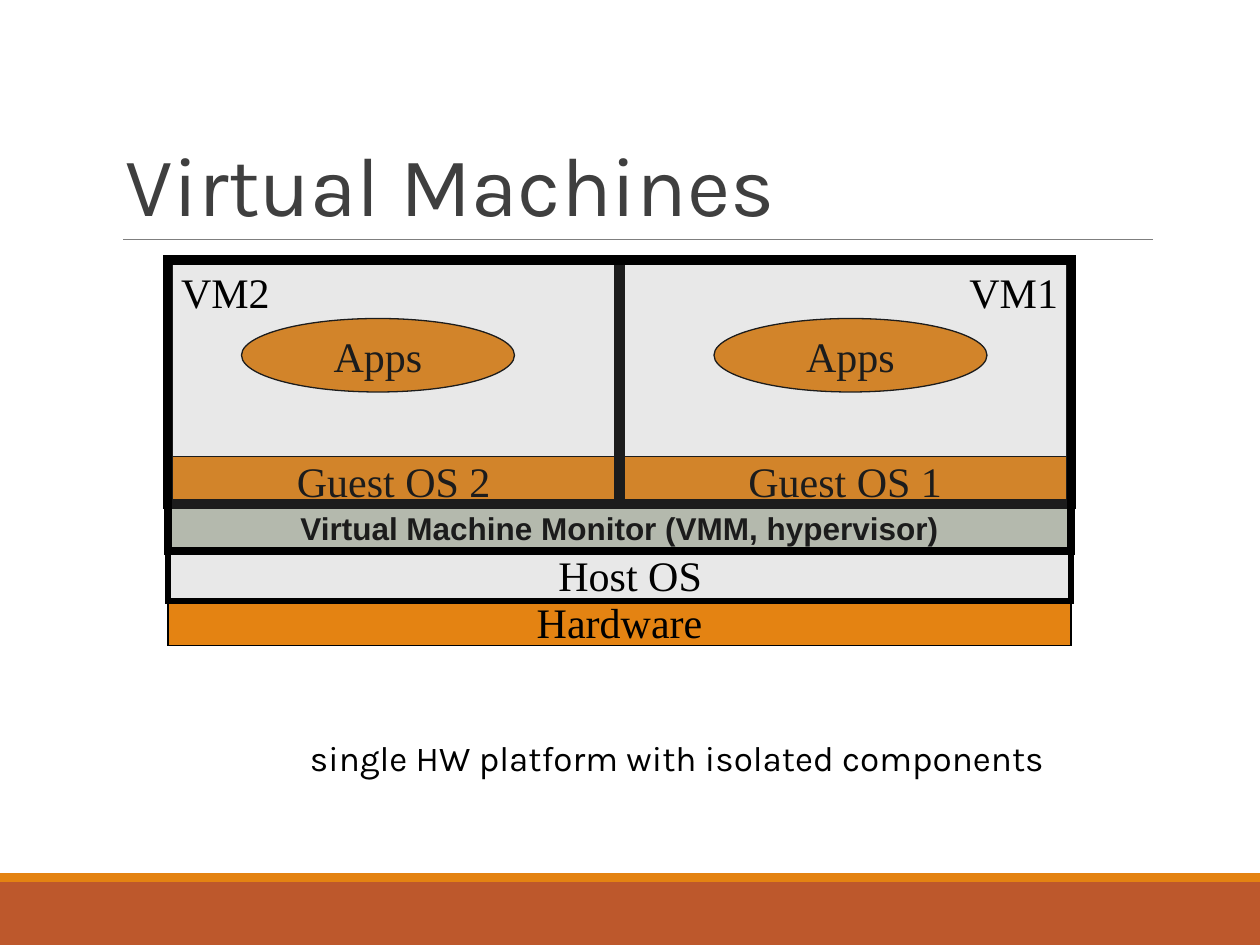
from dataclasses import dataclass

from lxml.etree import SubElement
from pptx import Presentation
from pptx.dml.color import RGBColor
from pptx.enum.shapes import MSO_CONNECTOR as Connector, MSO_SHAPE as Shape
from pptx.enum.text import MSO_ANCHOR as Anchor, PP_ALIGN as Align
from pptx.oxml.ns import qn
from pptx.util import Pt


@dataclass(frozen=True)
class Theme:
    ink: str = "000000"
    heading: str = "3F3F3F"
    rule: str = "7F7F7F"
    orange: str = "E48312"
    rust: str = "BD582C"
    sage: str = "BEC5B6"
    veil: str = "8C8C8C"
    title_size: int = 48
    label_size: int = 24
    caption_size: int = 20
    monitor_size: int = 18
    sans: str = "Karla"
    serif: str = "Times New Roman"
    bold_face: str = "Arial"


class SlideBuilder:
    def __init__(self, slide, theme):
        self.slide = slide
        self.theme = theme

    def style_text(self, frame, text, size=None, font=None, color=None,
                   align=Align.CENTER, bold=False):
        frame.text = text
        para = frame.paragraphs[0]
        para.alignment = align
        span = para.runs[0]
        span.font.size = Pt(size or self.theme.label_size)
        span.font.name = font or self.theme.serif
        span.font.bold = bold
        span.font.color.rgb = RGBColor.from_string(color or self.theme.ink)
        return para

    def box(self, left, top, width, height, fill=None, line=0.75,
            text=None, kind=Shape.RECTANGLE, opacity=None, **style):
        box = self.slide.shapes.add_shape(
            kind, Pt(left), Pt(top), Pt(width), Pt(height))
        box.shadow.inherit = False
        if fill:
            box.fill.solid()
            box.fill.fore_color.rgb = RGBColor.from_string(fill)
        else:
            box.fill.background()
        if opacity:
            color = box._element.spPr.find(qn("a:solidFill"))[0]
            SubElement(color, qn("a:alpha"), val=str(opacity * 1000))
        if line:
            box.line.width = Pt(line)
            box.line.color.rgb = RGBColor.from_string(self.theme.ink)
            outline = box._element.spPr.find(qn("a:ln"))
            SubElement(outline, qn("a:miter"), lim="800000")
        else:
            box.line.fill.background()
        if text:
            box.text_frame.vertical_anchor = Anchor.MIDDLE
            self.style_text(box.text_frame, text, **style)

    def label(self, left, top, width, height, text, anchor=Anchor.TOP,
              wrap=False, **style):
        box = self.slide.shapes.add_textbox(
            Pt(left), Pt(top), Pt(width), Pt(height))
        box.text_frame.word_wrap = wrap
        box.text_frame.vertical_anchor = anchor
        return self.style_text(box.text_frame, text, **style)

    def rule(self, left, top, right):
        line = self.slide.shapes.add_connector(
            Connector.STRAIGHT, Pt(left), Pt(top), Pt(right), Pt(top))
        line.line.width = Pt(0.75)
        line.line.color.rgb = RGBColor.from_string(self.theme.rule)
        SubElement(line._element.spPr, qn("a:effectLst"))

    def machine(self, left, top, width, height, apps_left, guest):
        guest_height = 27
        self.box(left, top + height - guest_height, width, guest_height,
                 self.theme.orange, text=guest)
        self.box(left, top, width, height, line=6)
        self.box(apps_left, 182, 156, 42, self.theme.orange, text="Apps",
                 kind=Shape.OVAL)


def main():
    theme = Theme()
    deck = Presentation()
    deck.slide_width, deck.slide_height = Pt(720), Pt(540)
    page = SlideBuilder(deck.slides.add_slide(deck.slide_layouts[6]), theme)

    page.box(0, 504, 720, 36, theme.rust, line=0)
    page.box(0, 499, 720, 5, theme.orange, line=0)
    page.rule(70.5, 136.8, 659)
    title = page.label(64.8, 22.3, 594, 114.5, "Virtual Machines",
                       anchor=Anchor.BOTTOM, wrap=True, align=Align.LEFT,
                       size=theme.title_size, font=theme.sans,
                       color=theme.heading)
    title.line_spacing = 0.85

    left, top, width = 96, 148.5, 516
    half = width / 2
    page.box(left, 288, width, 27, theme.sage,
             text="Virtual Machine Monitor (VMM, hypervisor)",
             size=theme.monitor_size, font=theme.bold_face, bold=True)
    for column, (number, apps_left) in enumerate([(2, 138), (1, 408)]):
        page.machine(left + column * half, top, half, 139.5, apps_left,
                     f"Guest OS {number}")
    page.box(left, 342, width, 27, theme.orange, text="Hardware")
    page.box(left, 150, width, 193.5, theme.veil, line=3, opacity=20)
    page.label(312, 310.5, 97, 36, "Host OS", align=Align.LEFT)
    page.box(left, top, width, 166.5, line=4.5)

    tag_width = 65.5
    for name, tag_left in [("VM2", left), ("VM1", left + width - tag_width)]:
        page.label(tag_left, top, tag_width, 36, name)

    caption = page.label(36, 398, 666, 44,
                         "single HW platform with isolated components",
                         wrap=True, size=theme.caption_size, font=theme.sans)
    caption.line_spacing = 1.8
    caption.level = 1
    properties = caption._p.get_or_add_pPr()
    properties.set("marL", str(Pt(36)))
    properties.set("indent", "0")

    deck.save("out.pptx")


if __name__ == "__main__":
    main()
